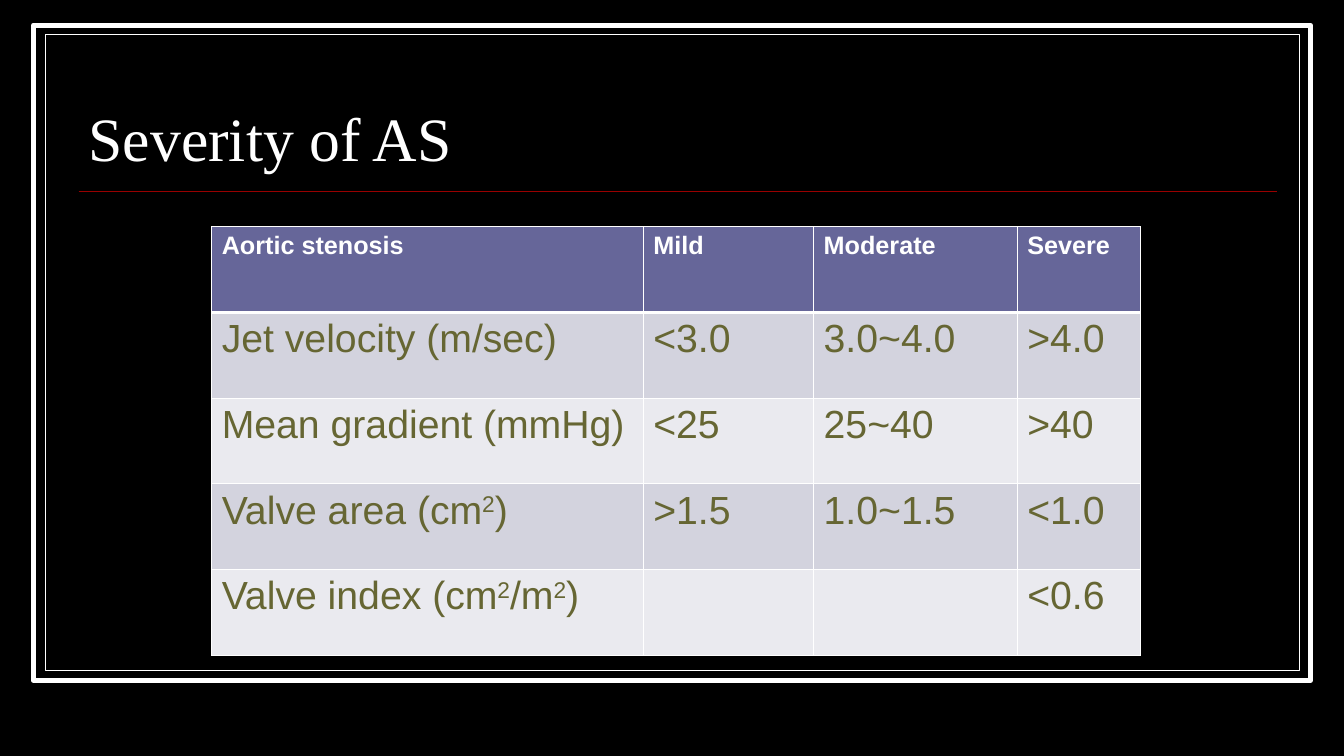
from lxml.etree import SubElement
from pptx import Presentation
from pptx.dml.color import RGBColor
from pptx.enum.shapes import MSO_CONNECTOR, MSO_SHAPE
from pptx.enum.text import MSO_ANCHOR, PP_ALIGN
from pptx.oxml.ns import qn
from pptx.util import Inches, Pt

BLACK, WHITE, RED = "000000", "FFFFFF", "990000"
HEADER_FILL, BAND_FILLS, OLIVE = "666699", ("D3D3DE", "EAEAEF"), "666633"
COLUMN_WIDTHS = (4.28, 1.69, 2.02, 1.22)
# Every second part between bars is superscript.
SEVERITY_ROWS = (
    ("Aortic stenosis", "Mild", "Moderate", "Severe"),
    ("Jet velocity (m/sec)", "<3.0", "3.0~4.0", ">4.0"),
    ("Mean gradient (mmHg)", "<25", "25~40", ">40"),
    ("Valve area (cm|2|)", ">1.5", "1.0~1.5", "<1.0"),
    ("Valve index (cm|2|/m|2|)", "", "", "<0.6"),
)


def color(hex_value):
    return RGBColor.from_string(hex_value)


def paint(fill, hex_value):
    fill.solid()
    fill.fore_color.rgb = color(hex_value)


def add_run(paragraph, text, size, font_name, hex_value, bold=False):
    run = paragraph.add_run()
    run.text = text
    run.font.size = Pt(size)
    run.font.name = font_name
    run.font.bold = bold
    run.font.color.rgb = color(hex_value)
    return run


def add_frame(slide, left, top, width, height, line_width):
    shape = slide.shapes.add_shape(
        MSO_SHAPE.RECTANGLE, Inches(left), Inches(top), Inches(width), Inches(height))
    shape.shadow.inherit = False
    paint(shape.fill, BLACK)
    shape.line.color.rgb = color(WHITE)
    shape.line.width = Pt(line_width)


def add_rule(slide, left, top, width):
    rule = slide.shapes.add_connector(
        MSO_CONNECTOR.STRAIGHT, Inches(left), Inches(top), Inches(left + width), Inches(top))
    rule.line.color.rgb = color(RED)
    rule.line.width = Pt(1)
    SubElement(rule._element.spPr, qn("a:effectLst"))


def place_title(slide, text, left, top, width, height):
    """Format the title placeholder and bring it in front of the frames."""
    title = slide.shapes.title
    title.left, title.top = Inches(left), Inches(top)
    title.width, title.height = Inches(width), Inches(height)
    title.text_frame.vertical_anchor = MSO_ANCHOR.BOTTOM
    paragraph = title.text_frame.paragraphs[0]
    paragraph.alignment = PP_ALIGN.LEFT
    paragraph.line_spacing = 0.8
    add_run(paragraph, text, 44, "Times New Roman", WHITE)
    slide.shapes._spTree.append(title._element)


def set_borders(cell, **widths):
    """Draw white borders; widths in points are keyed by L, R, T and B, in that order."""
    properties = cell._tc.get_or_add_tcPr()
    for side, width in widths.items():
        line = SubElement(properties, qn(f"a:ln{side}"), w=str(Pt(width)))
        fill = SubElement(line, qn("a:solidFill"))
        SubElement(fill, qn("a:srgbClr"), val=WHITE)


def fill_cell(cell, text, row_index):
    is_header = row_index == 0
    set_borders(cell, L=1, R=1, T=3 if row_index == 1 else 1, B=3 if is_header else 1)
    paint(cell.fill, HEADER_FILL if is_header else BAND_FILLS[(row_index - 1) % 2])
    size, text_color = (18, WHITE) if is_header else (28, OLIVE)
    paragraph = cell.text_frame.paragraphs[0]
    if not text:
        paragraph.font.size = Pt(size)
        return
    for index, part in enumerate(text.split("|")):
        run = add_run(paragraph, part, size, "Arial", text_color, is_header)
        if index % 2:
            run.font._element.set("baseline", "30000")


def add_severity_table(slide, left, top, height):
    table = slide.shapes.add_table(
        len(SEVERITY_ROWS), len(COLUMN_WIDTHS), Inches(left), Inches(top),
        Inches(sum(COLUMN_WIDTHS)), Inches(height)).table
    for column, width in zip(table.columns, COLUMN_WIDTHS):
        column.width = Inches(width)
    for row_index, texts in enumerate(SEVERITY_ROWS):
        for column_index, text in enumerate(texts):
            fill_cell(table.cell(row_index, column_index), text, row_index)


def build_severity_slide(presentation):
    slide = presentation.slides.add_slide(presentation.slide_layouts[5])
    paint(slide.background.fill, BLACK)
    add_frame(slide, 0.33, 0.25, 12.67, 6.5, 3.5)
    add_frame(slide, 0.45, 0.34, 12.44, 6.31, 0.75)
    add_rule(slide, 0.78, 1.9, 11.89)
    place_title(slide, "Severity of AS", 0.78, 0.52, 11.89, 1.25)
    add_severity_table(slide, 2.1, 2.25, 4.25)


def main():
    presentation = Presentation()
    presentation.slide_width = Inches(13.33)
    presentation.slide_height = Inches(7.5)
    build_severity_slide(presentation)
    presentation.save("out.pptx")


if __name__ == "__main__":
    main()
